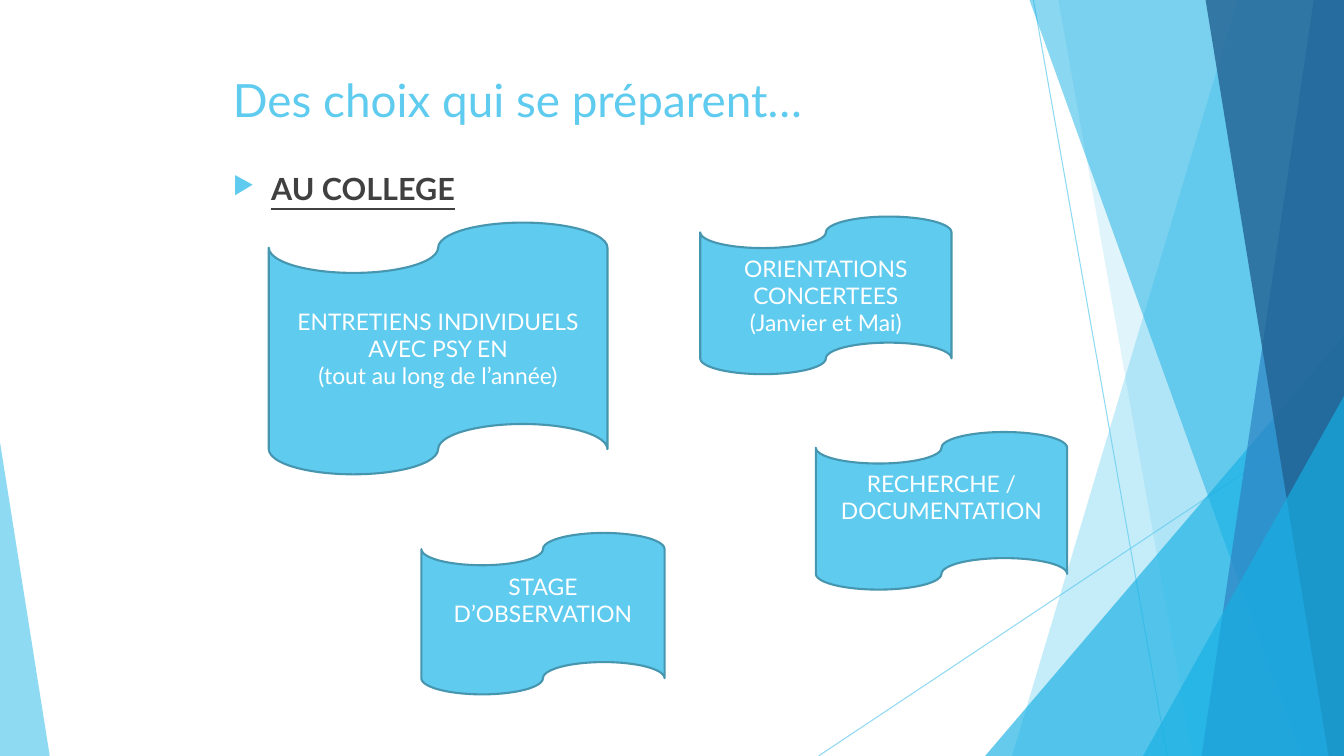
from dataclasses import dataclass

from lxml.etree import SubElement
from pptx import Presentation
from pptx.dml.color import RGBColor
from pptx.enum.shapes import MSO_CONNECTOR, MSO_SHAPE
from pptx.enum.text import MSO_ANCHOR, MSO_AUTO_SIZE, PP_ALIGN
from pptx.oxml.ns import qn
from pptx.util import Inches, Pt

# Content
TITLE = "Des choix qui se préparent…"
HEADING = "AU COLLEGE"

# Tapes: left, top, width, height (percent of the slide), free lines below the text, text
TAPES = [
    (31.35, 70.5, 18.1, 21.35, 1, ["STAGE D’OBSERVATION"]),
    (20, 29.45, 25.2, 33.3, 0,
     ["ENTRETIENS INDIVIDUELS", "AVEC PSY EN", "(tout au long de l’année)"]),
    (52.1, 28.65, 18.7, 20.85, 0, ["ORIENTATIONS CONCERTEES", "(Janvier et Mai)"]),
    (60.7, 57.15, 18.7, 20.85, 1, ["RECHERCHE / DOCUMENTATION"]),
]


@dataclass(frozen=True)
class Theme:
    font: str = "Lato"
    sky: str = "5FCBEF"
    cyan: str = "17B0E4"
    blue: str = "2E83C3"
    navy: str = "226292"
    outline: str = "4696B0"
    text: str = "404040"
    white: str = "FFFFFF"
    title_size: float = 32.7
    heading_size: float = 21.8
    tape_size: float = 16.3


theme = Theme()

# Facets, in percent of the slide, from back to front
# panel: x at the top, x at the bottom; it reaches the right edge
# triangle: left, right, top, apex (0 left, 1 right); it stands on the bottom edge
FACETS = [
    ("panel", (92.1, 75.3), theme.sky, 36),
    ("panel", (78.75, 88.75), theme.sky, 20),
    ("triangle", (73.3, 100, 44.4, 1), theme.cyan, 66),
    ("panel", (76.6, 96.85), theme.cyan, 50),
    ("panel", (97.75, 89.4), theme.blue, 70),
    ("panel", (89.7, 98.85), theme.navy, 80),
    ("triangle", (85.05, 100, 52.4, 1), theme.cyan, 66),
    ("triangle", (0, 3.7, 58.5, 0), theme.sky, 70),
]
RAYS = [(76.9, 0, 86.85, 100), (100, 53.75, 60.9, 100)]

presentation = Presentation()
presentation.slide_width, presentation.slide_height = Inches(13.33), Inches(7.5)
slide = presentation.slides.add_slide(presentation.slide_layouts[5])
shapes = slide.shapes


def place(x, y):
    return (round(presentation.slide_width * x / 100),
            round(presentation.slide_height * y / 100))


def colour(value):
    return RGBColor.from_string(value)


def set_opacity(shape, percent):
    for node in shape._element.spPr.iter(qn("a:srgbClr")):
        SubElement(node, qn("a:alpha"), val=str(percent * 1000))


def paint(shape, fill):
    shape.shadow.inherit = False
    shape.fill.solid()
    shape.fill.fore_color.rgb = colour(fill)
    shape.line.fill.background()


def set_frame(shape, anchor):
    frame = shape.text_frame
    frame.word_wrap = True
    frame.auto_size = MSO_AUTO_SIZE.NONE
    frame.vertical_anchor = anchor
    frame.margin_left = frame.margin_right = Inches(0.09)
    frame.margin_top = frame.margin_bottom = Inches(0.04)
    return frame


def set_font(paragraph, size, value, alignment):
    paragraph.alignment = alignment
    paragraph.font.name = theme.font
    paragraph.font.size = Pt(size)
    paragraph.font.color.rgb = colour(value)


# Thin rays
for x1, y1, x2, y2 in RAYS:
    ray = shapes.add_connector(MSO_CONNECTOR.STRAIGHT, *place(x1, y1), *place(x2, y2))
    ray.line.color.rgb = colour(theme.sky)
    ray.line.width = Pt(0.75)
    set_opacity(ray, 70)
    SubElement(ray._element.spPr, qn("a:effectLst"))

# Translucent facets
for kind, geometry, fill, opacity in FACETS:
    if kind == "panel":
        top_x, bottom_x = geometry
        builder = shapes.build_freeform(*place(top_x, 0))
        builder.add_line_segments([place(100, 0), place(100, 100), place(bottom_x, 100)])
        facet = builder.convert_to_shape()
    else:
        left, right, top, apex = geometry
        facet = shapes.add_shape(MSO_SHAPE.ISOSCELES_TRIANGLE, *place(left, top),
                                 *place(right - left, 100 - top))
        facet.adjustments[0] = apex
    paint(facet, fill)
    set_opacity(facet, opacity)

# Title
title = shapes.title
title.left, title.top = place(16.65, 8.9)
title.width, title.height = place(52.9, 19.2)
title_frame = set_frame(title, MSO_ANCHOR.TOP)
title_frame.text = TITLE
set_font(title_frame.paragraphs[0], theme.title_size, theme.sky, PP_ALIGN.LEFT)

# Bulleted heading
heading_box = shapes.add_textbox(*place(16.65, 22), *place(52.9, 6))
heading = set_frame(heading_box, MSO_ANCHOR.TOP).paragraphs[0]
heading.text = HEADING
properties = heading._p.get_or_add_pPr()
properties.set("marL", str(Inches(0.38)))
properties.set("indent", str(-Inches(0.38)))
bullet_colour = SubElement(properties, qn("a:buClr"))
SubElement(bullet_colour, qn("a:srgbClr"), val=theme.sky)
SubElement(properties, qn("a:buSzPct"), val="80000")
SubElement(properties, qn("a:buChar"), char="▶")
set_font(heading, theme.heading_size, theme.text, PP_ALIGN.LEFT)
heading.font.bold = heading.font.underline = True

# Wavy tapes
for left, top, width, height, free_lines, lines in TAPES:
    tape = shapes.add_shape(MSO_SHAPE.FLOWCHART_PUNCHED_TAPE, *place(left, top),
                            *place(width, height))
    paint(tape, theme.sky)
    tape.line.color.rgb = colour(theme.outline)
    tape.line.width = Pt(1.5)
    frame = set_frame(tape, MSO_ANCHOR.MIDDLE)
    frame.margin_bottom += Pt(free_lines * theme.tape_size * 1.2)
    frame.text = "\n".join(lines)
    for paragraph in frame.paragraphs:
        set_font(paragraph, theme.tape_size, theme.white, PP_ALIGN.CENTER)

presentation.save("out.pptx")
